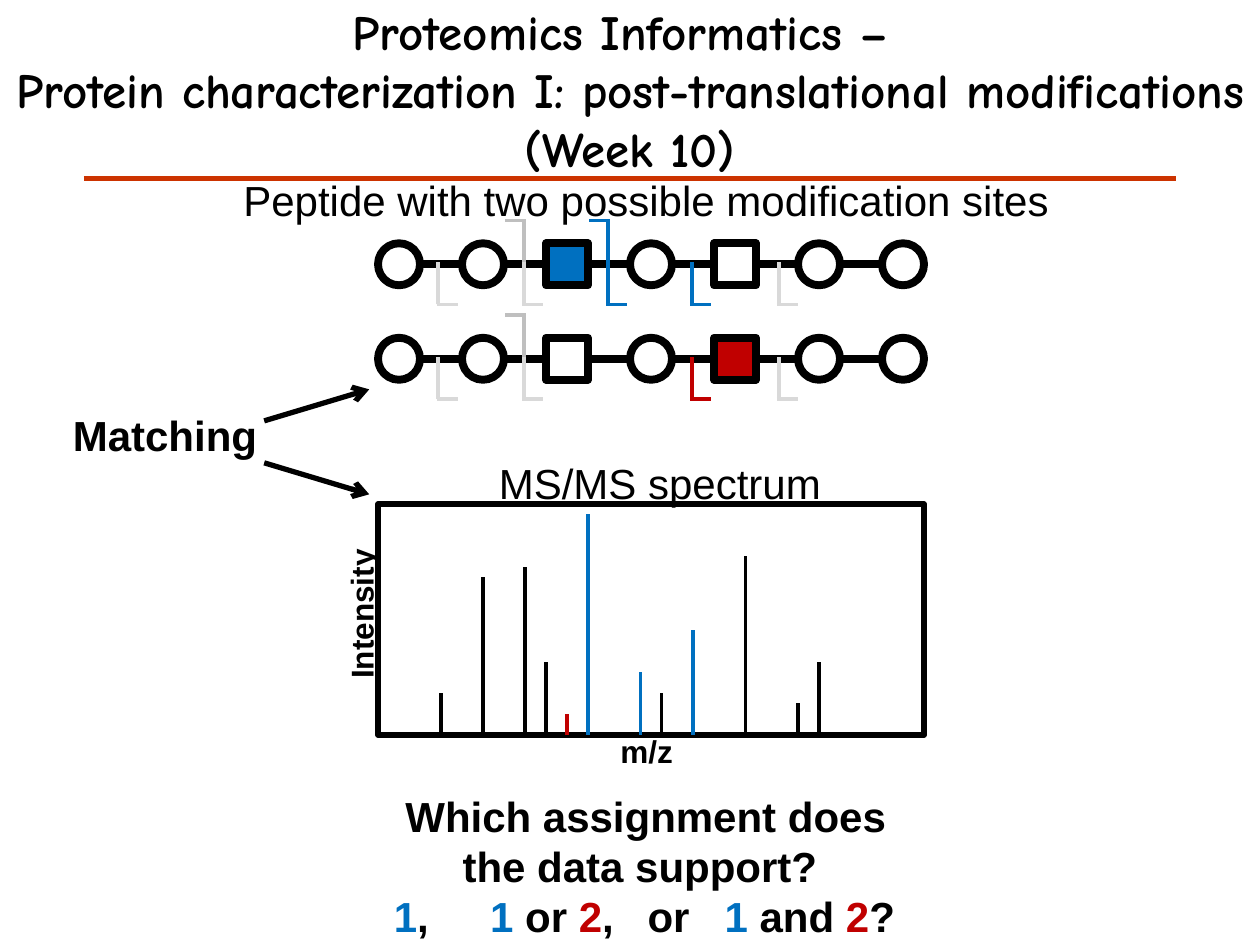
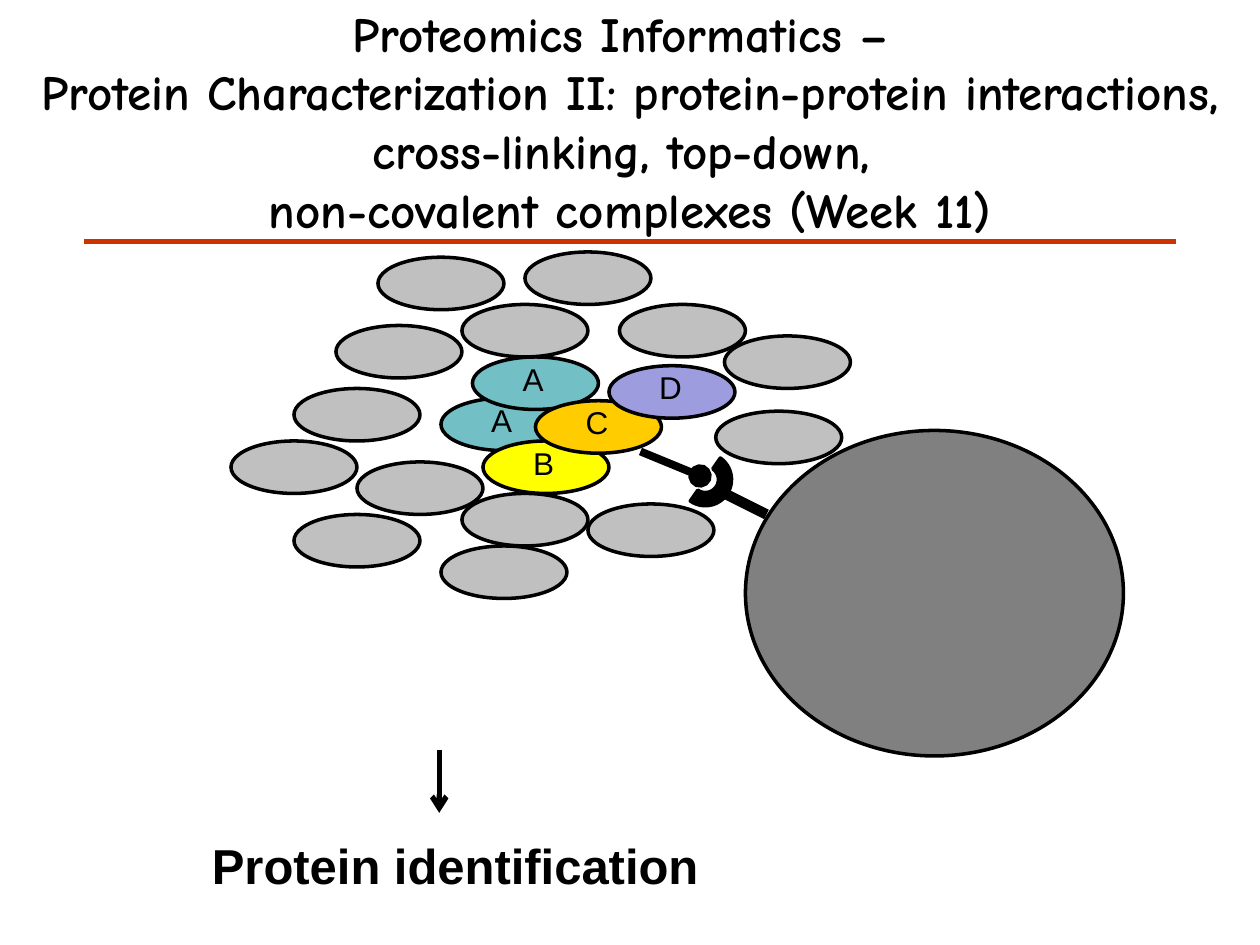
from dataclasses import dataclass
from lxml import etree
from pptx import Presentation
from pptx import util as u
from pptx.dml.color import RGBColor
from pptx.enum import shapes, text
from pptx.oxml.ns import qn

Pt = u.Pt
KIND = shapes.MSO_SHAPE
ALIGN = text.PP_ALIGN


@dataclass(frozen=True)
class Theme:
    black: str = "000000"
    white: str = "FFFFFF"
    rule: str = "CC3300"
    blue: str = "0070C0"
    red: str = "C00000"
    pale: str = "D9D9D9"
    gray: str = "BFBFBF"
    crowd: str = "C0C0C0"
    bead: str = "808080"
    teal: str = "72BFC5"
    yellow: str = "FFFF00"
    gold: str = "FFCC00"
    violet: str = "9C9CDF"
    head: str = "Comic Neue"
    body: str = "Arial"
    big: int = 28
    mid: int = 24
    small: int = 18


class Deck:
    def __init__(self, theme):
        self.theme = theme
        self.file = Presentation()
        self.file.slide_width, self.file.slide_height = Pt(720), Pt(540)

    def start(self, lines, top, rule):
        t = self.theme
        self.slide = self.file.slides.add_slide(self.file.slide_layouts[6])
        box = self.label(lines, 0, top, 720, 54, t.big, True,
                         ALIGN.CENTER, t.head, True)
        box.text_frame.vertical_anchor = text.MSO_ANCHOR.MIDDLE
        self.line(48, rule, 672, rule, t.rule, 2.5)

    def shape(self, kind, x, y, w, h, fill, width=2):
        item = self.slide.shapes.add_shape(kind, Pt(x), Pt(y), Pt(w), Pt(h))
        item.shadow.inherit = False
        item.fill.solid()
        item.fill.fore_color.rgb = RGBColor.from_string(fill)
        item.line.color.rgb = RGBColor.from_string(self.theme.black)
        item.line.width = Pt(width)
        return item

    def line(self, x1, y1, x2, y2, color=None, width=2.25, tip=None):
        item = self.slide.shapes.add_connector(
            shapes.MSO_CONNECTOR.STRAIGHT, Pt(x1), Pt(y1), Pt(x2), Pt(y2))
        item.line.color.rgb = RGBColor.from_string(color or self.theme.black)
        item.line.width = Pt(width)
        props = item.element.spPr
        if tip:
            etree.SubElement(props.find(qn("a:ln")), qn("a:tailEnd"), type=tip)
        etree.SubElement(props, qn("a:effectLst"))

    def style(self, para, size, bold, align, face=None):
        para.alignment = align
        font = para.font
        font.name, font.size, font.bold = face or self.theme.body, Pt(size), bold
        font.color.rgb = RGBColor.from_string(self.theme.black)

    def label(self, lines, x, y, w, h, size, bold=False, align=ALIGN.LEFT,
              face=None, wrap=False):
        box = self.slide.shapes.add_textbox(Pt(x), Pt(y), Pt(w), Pt(h))
        frame = box.text_frame
        frame.word_wrap = wrap
        if not wrap:
            frame.auto_size = text.MSO_AUTO_SIZE.SHAPE_TO_FIT_TEXT
        for n, words in enumerate(lines):
            para = frame.add_paragraph() if n else frame.paragraphs[0]
            self.style(para, size, bold, align, face)
            para.add_run().text = words
        return box

    def choice(self, box, parts, stops):
        para = box.text_frame.add_paragraph()
        self.style(para, self.theme.mid, True, ALIGN.LEFT)
        for words, color in parts:
            run = para.add_run()
            run.text = words
            run.font.color.rgb = RGBColor.from_string(color)
        tabs = etree.Element(qn("a:tabLst"))
        for stop in stops:
            etree.SubElement(tabs, qn("a:tab"), pos=str(Pt(stop)), algn="l")
        last = box.element.findall(".//" + qn("a:p"))[-1]
        last.find(qn("a:pPr")).insert(0, tabs)

    def chain(self, top, sites):
        t = self.theme
        for n in range(7):
            x = 216 + 48 * n
            kind = KIND.RECTANGLE if n in sites else KIND.OVAL
            self.shape(kind, x, top, 24, 24, sites.get(n, t.white), 4.5)
            if n:
                self.line(x - 24, top + 12, x, top + 12, width=4.5)

    def mark(self, x, mid, side, color):
        end = mid + 24 * side
        self.line(x, end, x, mid, color)
        self.line(x - side, end, x + 11 * side, end, color)


def sites_slide(deck):
    t = deck.theme
    deck.start(["Proteomics Informatics – ",
                "Protein characterization I: post-translational modifications (Week 10)"],
               24, 102)
    deck.label(["Peptide with two possible modification sites"],
               132, 96, 479.5, 36, t.mid)
    deck.chain(139, {2: t.blue, 4: t.white})
    deck.chain(193, {2: t.white, 4: t.red})

    deck.shape(KIND.RECTANGLE, 216, 288, 312, 132, t.white, 3)
    peaks = [(252, 24, t.black), (276, 90, t.black), (300, 96, t.black),
             (312, 42, t.black), (324, 12, t.red), (336, 126, t.blue),
             (366, 36, t.blue), (378, 24, t.black), (396, 60, t.blue),
             (426, 102, t.black), (456, 18, t.black), (468, 42, t.black)]
    for x, high, color in peaks:
        deck.line(x, 420, x, 420 - high, color)
    deck.label(["MS/MS spectrum"], 278, 258, 200, 36, t.mid)
    deck.label(["m/z"], 347.5, 415, 45, 29, t.small, True)
    deck.label(["Intensity"], 162, 336, 89, 29, t.small, True).rotation = 270

    for mid, color in ((150, t.blue), (204, t.red)):
        deck.mark(299.5, mid, -1, t.gray)
        for x in (250.5, 299.5, 445):
            deck.mark(x, mid, 1, t.pale)
        deck.mark(395.5, mid, 1, color)
    for side in (-1, 1):
        deck.mark(347.5, 150, side, t.blue)

    deck.label(["Matching"], 34.5, 230.5, 121, 36, t.mid, True)
    for side in (-1, 1):
        deck.line(151, 252.5 + 12 * side, 211, 252.5 + 30 * side,
                  width=3, tip="arrow")
    ask = deck.label(["Which assignment does", "the data support? "],
                     218, 448, 302, 94, t.mid, True, ALIGN.CENTER, wrap=True)
    deck.choice(ask, [("1", t.blue), (",\t", t.black), ("1 ", t.blue),
                      ("or ", t.black), ("2", t.red), (",\tor\t", t.black),
                      ("1 ", t.blue), ("and ", t.black), ("2", t.red),
                      ("?", t.black)], (55, 145, 189))


def complex_slide(deck):
    t = deck.theme
    deck.start(["Proteomics Informatics – ",
                "Protein Characterization II: protein-protein interactions, "
                "cross-linking, top-down, ",
                "non-covalent complexes (Week 11)"], 42, 138)
    parts = [("A", 252, 227.5, t.teal), ("B", 276, 252, t.yellow),
             ("A", 270, 204, t.teal), ("C", 306, 229, t.gold),
             ("D", 348, 209, t.violet)]
    for name, x, y, color in parts:
        deck.shape(KIND.OVAL, x, y, 72, 30, color)
        deck.label([name], x + 21.5, y - 2, 27, 29, t.small)
    crowd = [(204, 264), (168, 222), (192, 186), (264, 174), (264, 282),
             (354, 174), (409, 235), (300, 144), (414, 192), (336, 288),
             (132, 252), (168, 294), (216, 147), (252, 312)]
    for x, y in crowd:
        deck.shape(KIND.OVAL, x, y, 72, 30, t.crowd)
    deck.line(366, 258, 400, 272, width=4.5, tip="oval")
    deck.shape(KIND.OVAL, 426, 246, 216, 186, t.bead)
    deck.line(438, 294, 414, 282, width=6)
    deck.shape(KIND.BLOCK_ARC, 388, 259, 30, 30, t.black).rotation = 125
    deck.label(["Protein identification"], 114, 474, 296, 41, t.big, True)
    deck.line(251, 428.5, 251, 464.5, width=3, tip="arrow")


def main():
    deck = Deck(Theme())
    sites_slide(deck)
    complex_slide(deck)
    deck.file.save("out.pptx")


if __name__ == "__main__":
    main()
